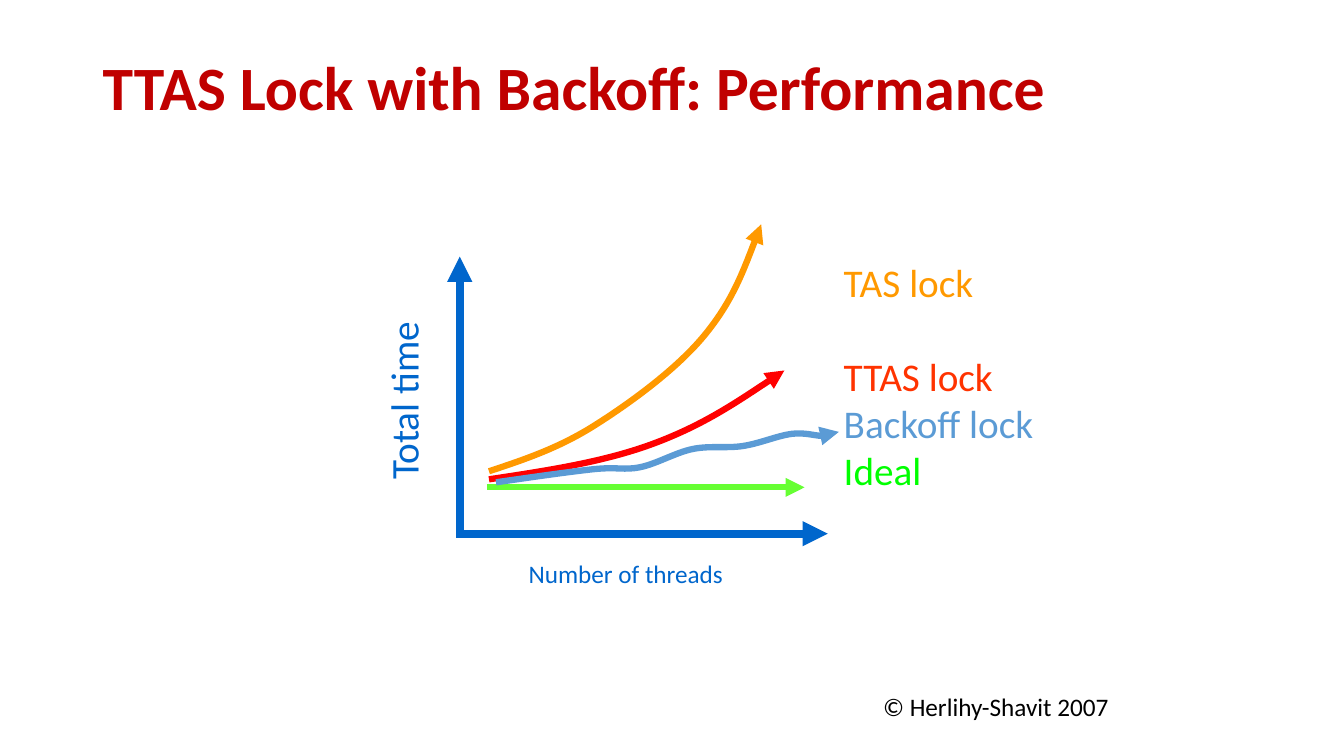
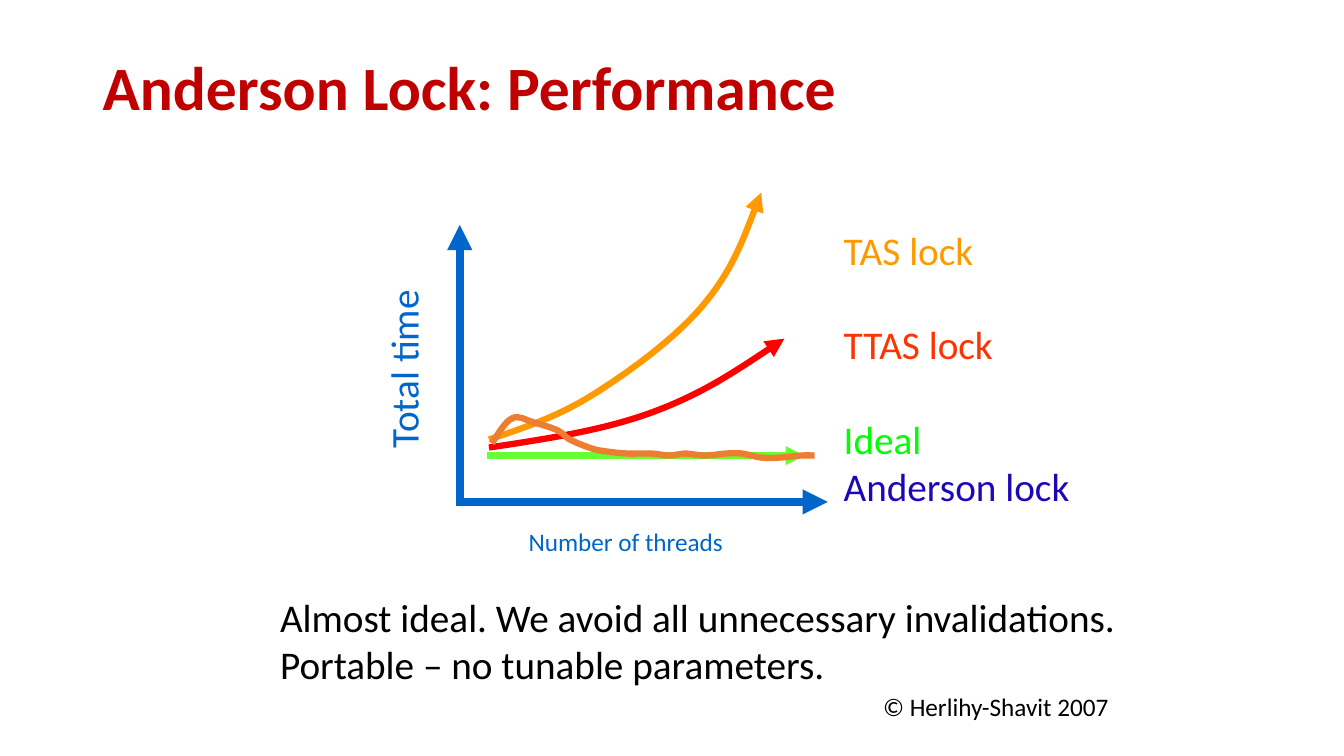
from pptx import Presentation
from pptx.dml.color import RGBColor as Rgb
from pptx.enum.shapes import MSO_CONNECTOR as Connector
from pptx.enum.text import MSO_ANCHOR as Anchor
from pptx.oxml.ns import qn
from pptx.oxml.xmlchemy import OxmlElement as Element
from pptx.util import Inches, Pt

COLORS = {
    "title": "C00000", "text": "000000", "axis": "0066CC",
    "tas": "FF9900", "ttas": "FF0000", "ttas_label": "FF3300",
    "ideal": "66FF33", "ideal_label": "00FF00", "backoff": "5B9BD5",
    "anderson": "ED7D31", "anderson_label": "1D08B8",
}
FONT = "Calibri"
ROWS = 75                       # the grid has square cells
SLIDE_W, SLIDE_H = Inches(13.33), Inches(7.5)
CELL = SLIDE_H / ROWS
BODY, SMALL = 28, 18            # text sizes
LEGEND_LINE = 33.6              # one skipped legend line, in points

# Curve nodes in cells right of and above the plot's corner
TAS = [(2.9, 6.2), (13.3, 10.7), (24.2, 19.6), (29.9, 30.7)]
TTAS = [(2.9, 5.4), (19.1, 8.9), (32.2, 16.2)]
BACKOFF = [(3.6, 5.1), (13.3, 6.4), (17.9, 6.6), (23.1, 8.4),
           (28.1, 8.7), (32.9, 9.9), (36.1, 9.7), (37.6, 10.1)]
ANDERSON = [(3.2, 5.8), (5.2, 8.3), (7.3, 7.9), (9.7, 7.1), (10.9, 6.2),
            (13.1, 5.3), (14.6, 5), (16.6, 4.8), (19, 4.8), (20.8, 4.6),
            (22.4, 4.8), (24.3, 4.6), (26.4, 4.8), (28, 4.8), (29.9, 4.4),
            (31.8, 4.4), (33.8, 4.6), (35.2, 4.6)]


def midpoint(a, b):
    return (a[0] + b[0]) / 2, (a[1] + b[1]) / 2


def smooth(nodes):
    """Return (control, control, node) for each span of a curve through nodes."""
    before, after = {}, {}
    for i in range(1, len(nodes) - 1):
        (x0, y0), (x, y), (x1, y1) = nodes[i - 1:i + 2]
        dx, dy = (x1 - x0) / 6, (y1 - y0) / 6
        before[i], after[i] = (x - dx, y - dy), (x + dx, y + dy)
    last = len(nodes) - 1
    after[0] = midpoint(nodes[0], before[1])
    before[last] = midpoint(nodes[last], after[last - 1])
    return [(after[i], before[i + 1], nodes[i + 1]) for i in range(last)]


class Deck:
    def __init__(self):
        self.prs = Presentation()
        self.prs.slide_width, self.prs.slide_height = SLIDE_W, SLIDE_H
        self.shapes = None
        self.corner = (0, 0)

    def new_slide(self, title, corner):
        """Start a slide with its title and footer; corner is where the axes meet."""
        self.shapes = self.prs.slides.add_slide(self.prs.slide_layouts[6]).shapes
        self.corner = corner
        heading = self.text((9.2, 1.7, 115, 14.5), [(title, "title", 0)], 44, bold=True)
        heading.text_frame.vertical_anchor = Anchor.MIDDLE
        heading.text_frame.paragraphs[0].line_spacing = 0.9
        self.text((86.6, 68.1, 26.2, 5), [("© Herlihy-Shavit 2007", "text", 0)], SMALL)

    def place(self, point):
        """Turn a plot point into slide lengths."""
        return (round((self.corner[0] + point[0]) * CELL),
                round((self.corner[1] - point[1]) * CELL))

    def text(self, box, lines, size, bold=False):
        """Write lines of (words, colour, points of space before)."""
        area = self.shapes.add_textbox(*(round(n * CELL) for n in box))
        frame = area.text_frame
        frame.word_wrap = True
        for i, (words, color, gap) in enumerate(lines):
            para = frame.paragraphs[0] if i == 0 else frame.add_paragraph()
            para.space_before = Pt(gap)
            run = para.add_run()
            run.text = words
            run.font.name, run.font.size, run.font.bold = FONT, Pt(size), bold
            run.font.color.rgb = Rgb.from_string(COLORS[color])
        return area

    def plot_text(self, left, above, width, height, lines, size):
        x, y = self.corner
        return self.text((x + left, y - above, width, height), lines, size)

    def stroke(self, shape, color, width, arrow):
        shape.line.color.rgb = Rgb.from_string(COLORS[color])
        shape.line.width = Pt(width)
        if arrow:
            tip = Element("a:tailEnd")
            tip.set("type", "triangle")
            shape.line._get_or_add_ln().append(tip)

    def arrow(self, start, end, color, width=4.5):
        line = self.shapes.add_connector(
            Connector.STRAIGHT, *self.place(start), *self.place(end))
        self.stroke(line, color, width, True)
        line._element.spPr.append(Element("a:effectLst"))

    def curve(self, nodes, color, arrow=True):
        builder = self.shapes.build_freeform(*self.place(nodes[0]))
        builder.add_line_segments(
            [self.place(point) for span in smooth(nodes) for point in span], close=False)
        shape = builder.convert_to_shape()
        shape.shadow.inherit = False
        shape.fill.background()
        # Every three points become one cubic span
        outline = shape._element.xpath(".//a:path")[0]
        steps = outline.findall(qn("a:lnTo"))
        for i in range(0, len(steps), 3):
            span = Element("a:cubicBezTo")
            for step in steps[i:i + 3]:
                span.append(step[0])
                outline.remove(step)
            outline.append(span)
        self.stroke(shape, color, 4.5, arrow)

    def plot(self, legend):
        """Draw the axes, their names, the legend and the shared curves."""
        self.arrow((0, -0.4), (0, 27.5), "axis", 6)
        self.arrow((0, 0), (36.5, 0), "axis", 6)
        self.plot_text(37.1, 27.8, 27, 30, legend, BODY)
        self.arrow((2.7, 4.6), (34.2, 4.6), "ideal")
        self.curve(TAS, "tas")
        self.curve(TTAS, "ttas")
        time_label = self.plot_text(-14.95, 16.85, 19, 6, [("Total time", "axis", 0)], BODY)
        time_label.rotation = 270
        self.plot_text(5.85, -1.9, 23, 5, [("Number of threads", "axis", 0)], SMALL)


def main():
    deck = Deck()
    tas_label = ("TAS lock", "tas", 0)
    ttas_label = ("TTAS lock", "ttas_label", LEGEND_LINE)

    # Backoff lock
    deck.new_slide("TTAS Lock with Backoff: Performance", (45.6, 52.95))
    deck.plot([tas_label, ttas_label, ("Backoff lock", "backoff", 0),
               ("Ideal", "ideal_label", 0)])
    deck.curve(BACKOFF, "backoff")

    # Anderson lock
    deck.new_slide("Anderson Lock: Performance", (45.6, 49.8))
    deck.plot([tas_label, ttas_label, ("Ideal", "ideal_label", LEGEND_LINE),
               ("Anderson lock", "anderson_label", 0)])
    deck.curve(ANDERSON, "anderson", arrow=False)
    deck.text((26.8, 58.4, 88, 10.4), [
        ("Almost ideal. We avoid all unnecessary invalidations.", "text", 0),
        ("Portable – no tunable parameters.", "text", 0)], BODY)

    deck.prs.save("out.pptx")


if __name__ == "__main__":
    main()
